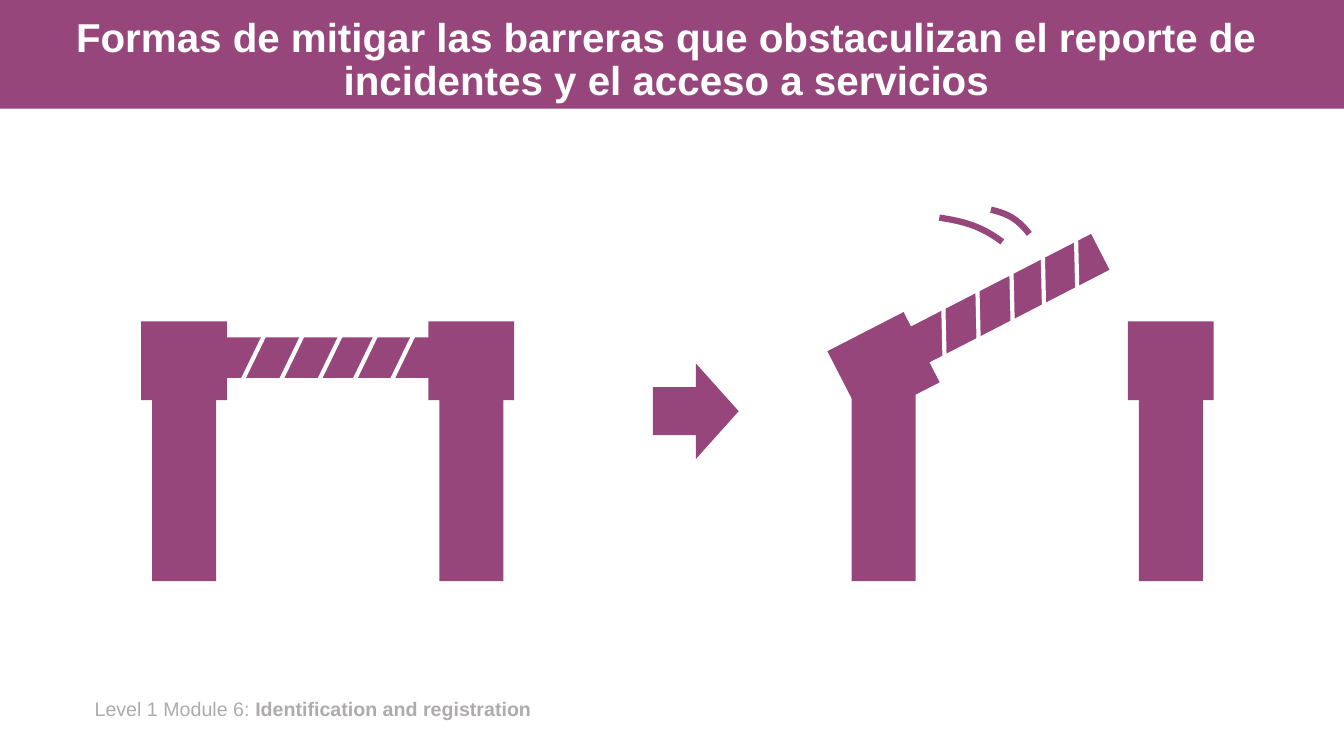
from math import cos, radians, sin

from lxml.etree import SubElement
from pptx import Presentation
from pptx.dml.color import RGBColor
from pptx.enum.shapes import MSO_CONNECTOR, MSO_SHAPE
from pptx.enum.text import MSO_ANCHOR, PP_ALIGN
from pptx.oxml.ns import qn
from pptx.util import Pt

COLORS = {"plum": "97467C", "white": "FFFFFF", "gray": "AFABAB"}
HEAD = (61.2, 56.4)
STEM = (45.7, 145.4)
BEAM = (159.8, 28.8)
POST_GAP = 205.2
STRIPE_OFFSETS = (0, 27.4, 54.7, 79.9, 106.6)


def color(name):
    return RGBColor.from_string(COLORS[name])


def add_block(page, box, kind=MSO_SHAPE.RECTANGLE, angle=0):
    shape = page.shapes.add_shape(kind, *map(Pt, box))
    shape.shadow.inherit = False
    shape.fill.solid()
    shape.fill.fore_color.rgb = color("plum")
    shape.line.fill.background()
    shape.rotation = angle % 360


def add_text(page, box, runs, size, ink, align=PP_ALIGN.LEFT,
             anchor=MSO_ANCHOR.TOP, spacing=1.0):
    """Write one paragraph from (text, bold) pairs."""
    frame = page.shapes.add_textbox(*map(Pt, box)).text_frame
    frame.word_wrap = True
    frame.vertical_anchor = anchor
    para = frame.paragraphs[0]
    para.alignment = align
    para.line_spacing = spacing
    for text, bold in runs:
        span = para.add_run()
        span.text = text
        span.font.name = "Arial"
        span.font.size = Pt(size)
        span.font.bold = bold
        span.font.color.rgb = color(ink)


def add_stripe(page, start, end):
    stripe = page.shapes.add_connector(MSO_CONNECTOR.STRAIGHT, *map(Pt, start + end))
    stripe.line.color.rgb = color("white")
    stripe.line.width = Pt(3)
    SubElement(stripe._element.spPr, qn("a:effectLst"))


def add_header(page, box):
    left, top, width, height = box
    add_block(page, box)
    add_text(page, (left - 7.9, top + 9.4, width + 7.9, height - 9.4),
             [("Formas de mitigar las barreras que obstaculizan el reporte de "
               "incidentes y el acceso a servicios", True)],
             28.8, "white", PP_ALIGN.CENTER, MSO_ANCHOR.MIDDLE, 0.9)


def add_footer(page, box):
    add_text(page, box, [("Level 1 Module 6: ", False),
                         ("Identification and registration", True)], 14, "gray")


def add_arm(page, pivot, angle):
    """Draw the left head, beam and stripes, turned about the head's centre."""
    turn = radians(angle)

    def turned(across, down):
        return (pivot[0] + across * cos(turn) - down * sin(turn),
                pivot[1] + across * sin(turn) + down * cos(turn))

    for size, centre in ((HEAD, pivot), (BEAM, turned(95.4, -2.2))):
        corner = (centre[0] - size[0] / 2, centre[1] - size[1] / 2)
        add_block(page, corner + size, angle=angle)
    for offset in STRIPE_OFFSETS:
        add_stripe(page, turned(60.8 + offset, -25.2), turned(38.5 + offset, 20.8))


def add_gate(page, left, top, angle=0, lift=0):
    """Draw two posts and an arm; lift moves the arm's pivot down in points."""
    for post_left in (left, left + POST_GAP):
        add_block(page, (post_left + 7.9, top + 40.3, *STEM))
    add_block(page, (left + POST_GAP, top, *HEAD))
    add_arm(page, (left + HEAD[0] / 2, top + HEAD[1] / 2 + lift), angle)


def add_motion_curve(page, left, top, points, steps=16):
    """Trace a cubic curve through four control points relative to the corner."""
    trace = []
    for step in range(steps + 1):
        t = step / steps
        weights = ((1 - t) ** 3, 3 * t * (1 - t) ** 2, 3 * t * t * (1 - t), t ** 3)
        trace.append(tuple(Pt(origin + sum(w * p[axis] for w, p in zip(weights, points)))
                           for axis, origin in enumerate((left, top))))
    builder = page.shapes.build_freeform(*trace[0])
    builder.add_line_segments(trace[1:], close=False)
    curve = builder.convert_to_shape()
    curve.shadow.inherit = False
    curve.fill.background()
    curve.line.color.rgb = color("plum")
    curve.line.width = Pt(4.5)


def main():
    deck = Presentation()
    deck.slide_width, deck.slide_height = Pt(960), Pt(540)
    page = deck.slides.add_slide(deck.slide_layouts[6])
    add_header(page, (0, 0, 960, 77.6))
    add_footer(page, (60.5, 494.6, 327.6, 24.5))
    add_gate(page, 100.8, 229.5)
    add_block(page, (466.4, 259.5, 61.2, 68.4), MSO_SHAPE.RIGHT_ARROW)
    add_gate(page, 600.5, 229.5, angle=-27.2, lift=4.3)
    add_motion_curve(page, 707.8, 149.8, ((0, 0), (10, 2.5), (18, 5), (27.4, 17.3)))
    add_motion_curve(page, 671, 155.5, ((0, 0), (17, 2.5), (30, 6), (45, 17.3)))
    deck.save("out.pptx")


if __name__ == "__main__":
    main()
